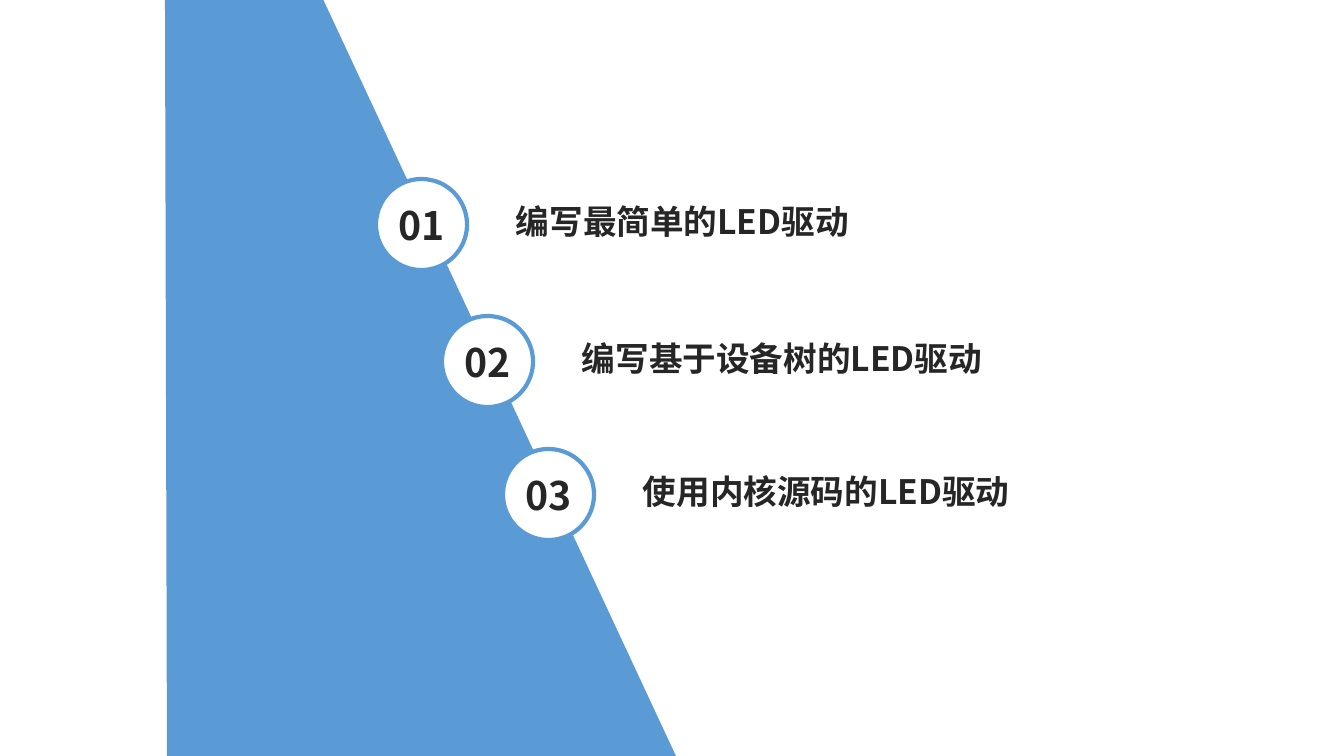
from lxml import etree
from pptx import Presentation
from pptx.dml.color import RGBColor
from pptx.enum.shapes import MSO_SHAPE
from pptx.enum.text import MSO_AUTO_SIZE, PP_ALIGN
from pptx.oxml.ns import qn
from pptx.util import Pt

OVAL = MSO_SHAPE.OVAL
GROW = MSO_AUTO_SIZE.SHAPE_TO_FIT_TEXT
LEFT, CENTER = PP_ALIGN.LEFT, PP_ALIGN.CENTER

EMU_PER_PX = 914400 / 100.8
FONT = "Noto Sans CJK SC"
BLUE, WHITE, INK = "5B9BD5", "FFFFFF", "262626"
PANEL = [(676, 756), (323, -1), (165, -1), (167, 760)]
BADGE = 91
TOPICS = [
    (376, 179, 616, "编写最简单的LED驱动"),
    (442, 316, 551, "编写基于设备树的LED驱动"),
    (503, 449, 551, "使用内核源码的LED驱动"),
]


def px(length):
    """Turn pixels into EMU."""
    return round(length * EMU_PER_PX)


def paint(color_format, color):
    """Set a colour from a hex string."""
    color_format.rgb = RGBColor.from_string(color)


def fill_shape(shape, color):
    """Give a shape a plain fill without a shadow."""
    shape.shadow.inherit = False
    shape.fill.solid()
    paint(shape.fill.fore_color, color)


def add_panel(page):
    """Draw the slanted blue panel."""
    builder = page.shapes.build_freeform(*PANEL[0], scale=EMU_PER_PX)
    builder.add_line_segments(PANEL[1:], close=True)
    panel = builder.convert_to_shape()
    fill_shape(panel, BLUE)
    panel.line.fill.background()


def add_text(shapes, left, top, width, height, text, size, align):
    """Add a bold one-line text box."""
    box = shapes.add_textbox(px(left), px(top), px(width), px(height))
    frame = box.text_frame
    frame.word_wrap = True
    frame.auto_size = GROW
    para = frame.paragraphs[0]
    para.alignment = align
    span = para.add_run()
    span.text = text
    span.font.size = Pt(size)
    span.font.bold = True
    span.font.name = FONT
    paint(span.font.color, INK)
    east_asian = etree.SubElement(span._r.get_or_add_rPr(), qn("a:ea"))
    east_asian.set("typeface", FONT)


def add_badge(page, left, top, number):
    """Add a numbered circle as a group."""
    group = page.shapes.add_group_shape()
    circle = group.shapes.add_shape(OVAL, px(left), px(top), px(BADGE), px(BADGE))
    fill_shape(circle, WHITE)
    paint(circle.line.color, BLUE)
    circle.line.width = Pt(3)
    add_text(group.shapes, left + 8, top + 17, 75, 60, f"{number:02d}", 28, CENTER)


def main():
    """Build the contents slide and save it."""
    deck = Presentation()
    deck.slide_width, deck.slide_height = px(1344), px(756)
    page = deck.slides.add_slide(deck.slide_layouts[6])
    add_panel(page)
    for number, (left, top, width, title) in enumerate(TOPICS, start=1):
        add_badge(page, left, top, number)
        add_text(page.shapes, left + 130, top + 17, width, 50, title, 24, LEFT)
    deck.save("out.pptx")


if __name__ == "__main__":
    main()
